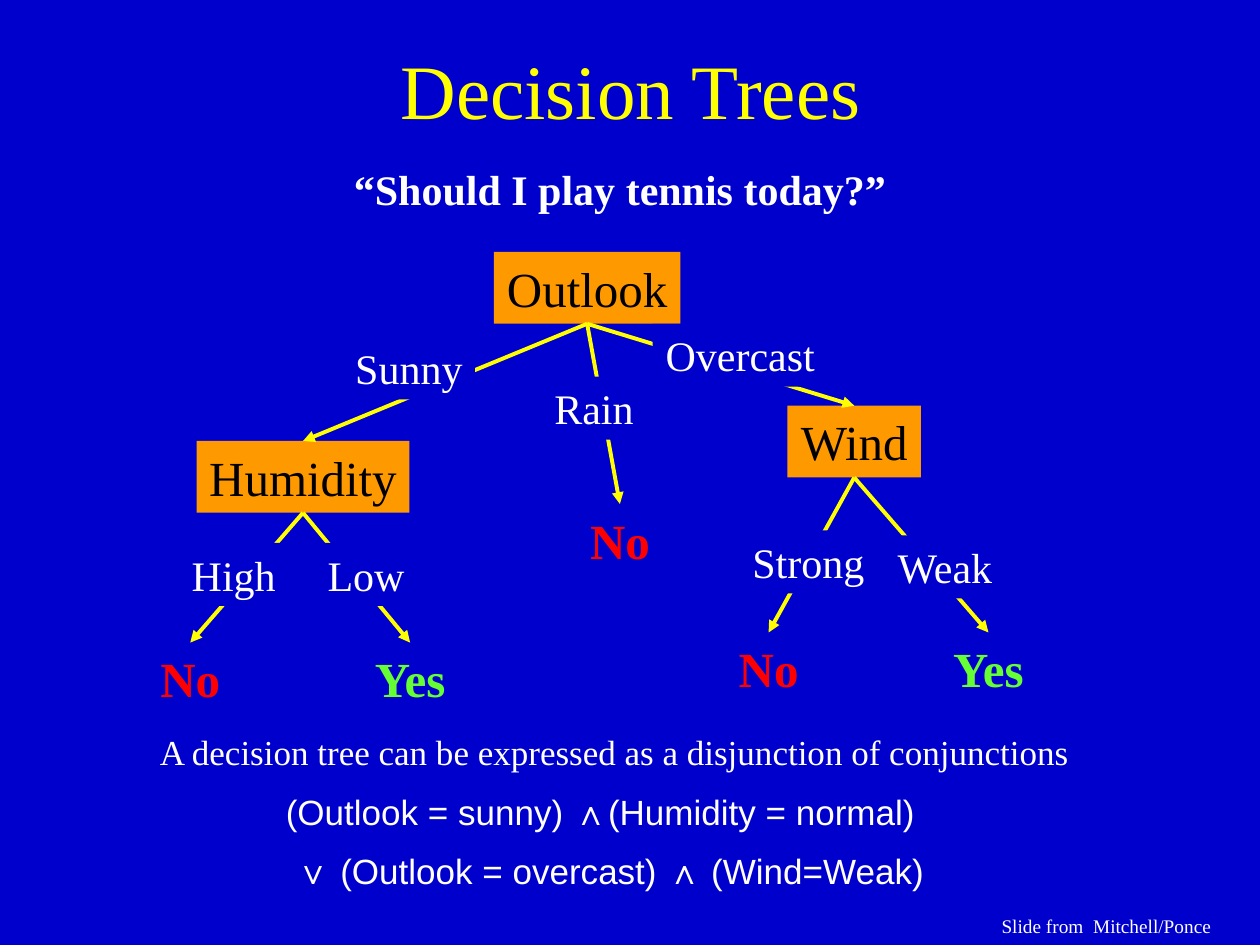
from dataclasses import dataclass
from typing import Any

from lxml import etree
from pptx import Presentation
from pptx import util as u
from pptx.dml.color import RGBColor
from pptx.enum import shapes, text
from pptx.oxml import ns

BLUE = RGBColor(0x00, 0x00, 0xCC)
YELLOW = RGBColor(0xFF, 0xFF, 0x00)
WHITE = RGBColor(0xFF, 0xFF, 0xFF)
ORANGE = RGBColor(0xFF, 0x99, 0x00)
BLACK = RGBColor(0x00, 0x00, 0x00)
RED = RGBColor(0xFF, 0x00, 0x00)
GREEN = RGBColor(0x66, 0xFF, 0x33)
CENTER = text.PP_ALIGN.CENTER
LEFT = text.PP_ALIGN.LEFT


@dataclass
class TreeSlide:
    page: Any
    serif: str = "Times New Roman"
    sans: str = "Arial"
    first_gap: float = 3

    def add_words(self, para, words, size, color, font=None, bold=False, align=CENTER, gap=0):
        para.alignment = align
        para.space_before = u.Pt(gap)
        span = para.add_run()
        span.text = words
        span.font.name = font or self.serif
        span.font.size = u.Pt(size)
        span.font.bold = bold
        span.font.color.rgb = color

    def frame(self, box, wrap=False, anchor=text.MSO_ANCHOR.TOP):
        frame = box.text_frame
        frame.word_wrap = wrap
        frame.vertical_anchor = anchor
        return frame

    def text_box(self, at, words, size, color, wrap=False, anchor=text.MSO_ANCHOR.TOP, **style):
        box = self.page.shapes.add_textbox(*map(u.Inches, at))
        frame = self.frame(box, wrap, anchor)
        self.add_words(frame.paragraphs[0], words, size, color, **style)
        return box

    def filled_box(self, at, words, size, color, fill):
        box = self.page.shapes.add_shape(shapes.MSO_SHAPE.RECTANGLE, *map(u.Inches, at))
        box.shadow.inherit = False
        box.fill.solid()
        box.fill.fore_color.rgb = fill
        box.line.fill.background()
        self.add_words(self.frame(box).paragraphs[0], words, size, color, gap=self.first_gap)
        return box

    def question(self, words, left, top, width):
        return self.filled_box((left, top, width, 0.57), words, 28, BLACK, ORANGE)

    def answer(self, words, left, top):
        width, color = (0.81, GREEN) if words == "Yes" else (0.68, RED)
        return self.text_box((left, top, width, 0.57), words, 28, color,
                             bold=True, gap=self.first_gap)

    def branch_label(self, words, left, top, width):
        return self.filled_box((left, top, width, 0.5), words, 24, WHITE, BLUE)

    def arrow(self, parent, child):
        line = self.page.shapes.add_connector(
            shapes.MSO_CONNECTOR.STRAIGHT,
            parent.left + parent.width // 2, parent.top + parent.height,
            child.left + child.width // 2, child.top)
        line.line.color.rgb = YELLOW
        line.line.width = u.Pt(2.25)
        outline = line._element.spPr.find(ns.qn("a:ln"))
        etree.SubElement(outline, ns.qn("a:tailEnd"), type="triangle")
        etree.SubElement(line._element.spPr, ns.qn("a:effectLst"))

    def formula(self, at, heading, clauses):
        box = self.text_box(at, heading, 20, WHITE, align=LEFT, gap=self.first_gap)
        for clause in clauses:
            para = box.text_frame.add_paragraph()
            para.level = 2
            self.add_words(para, clause, 20, WHITE, font=self.sans, align=LEFT, gap=10)
            properties = para._p.get_or_add_pPr()
            properties.set("marL", str(u.Inches(1)))
            properties.set("indent", "0")


def main():
    deck = Presentation()
    deck.slide_width, deck.slide_height = u.Inches(10), u.Inches(7.5)
    page = deck.slides.add_slide(deck.slide_layouts[6])
    page.background.fill.solid()
    page.background.fill.fore_color.rgb = BLUE
    tree = TreeSlide(page)

    tree.text_box((0.17, 0.08, 9.67, 1.25), "Decision Trees", 44, YELLOW,
                  wrap=True, anchor=text.MSO_ANCHOR.MIDDLE)
    tree.text_box((0.67, 1.25, 8.5, 0.6), "“Should I play tennis today?”", 24, WHITE,
                  wrap=True, bold=True, gap=tree.first_gap)
    tree.formula((1.17, 5.75, 7.47, 1.45),
                 "A decision tree can be expressed as a disjunction of conjunctions",
                 ["(Outlook = sunny) ∧(Humidity = normal)",
                  " ∨ (Outlook = overcast) ∧ (Wind=Weak)"])

    outlook = tree.question("Outlook", 3.92, 2, 1.48)
    humidity = tree.question("Humidity", 1.56, 3.5, 1.69)
    wind = tree.question("Wind", 6.25, 3.22, 1.06)
    branches = [
        (outlook, humidity),
        (outlook, wind),
        (outlook, tree.answer("No", 4.58, 4)),
        (humidity, tree.answer("No", 1.17, 5.1)),
        (humidity, tree.answer("Yes", 2.85, 5.1)),
        (wind, tree.answer("No", 5.76, 5.02)),
        (wind, tree.answer("Yes", 7.44, 5.02)),
    ]
    for parent, child in branches:
        tree.arrow(parent, child)

    for label in [
        ("Sunny", 2.72, 2.67, 1.05),
        ("Rain", 4.3, 2.99, 0.83),
        ("Overcast", 5.18, 2.57, 1.39),
        ("High", 1.42, 4.31, 0.87),
        ("Low", 2.5, 4.31, 0.81),
        ("Strong", 5.87, 4.21, 1.09),
        ("Weak", 7.01, 4.25, 0.98),
    ]:
        tree.branch_label(*label)

    tree.text_box((7.85, 7.21, 2.15, 0.29), "Slide from  Mitchell/Ponce", 11, WHITE,
                  wrap=True, align=LEFT)
    deck.save("out.pptx")


if __name__ == "__main__":
    main()
